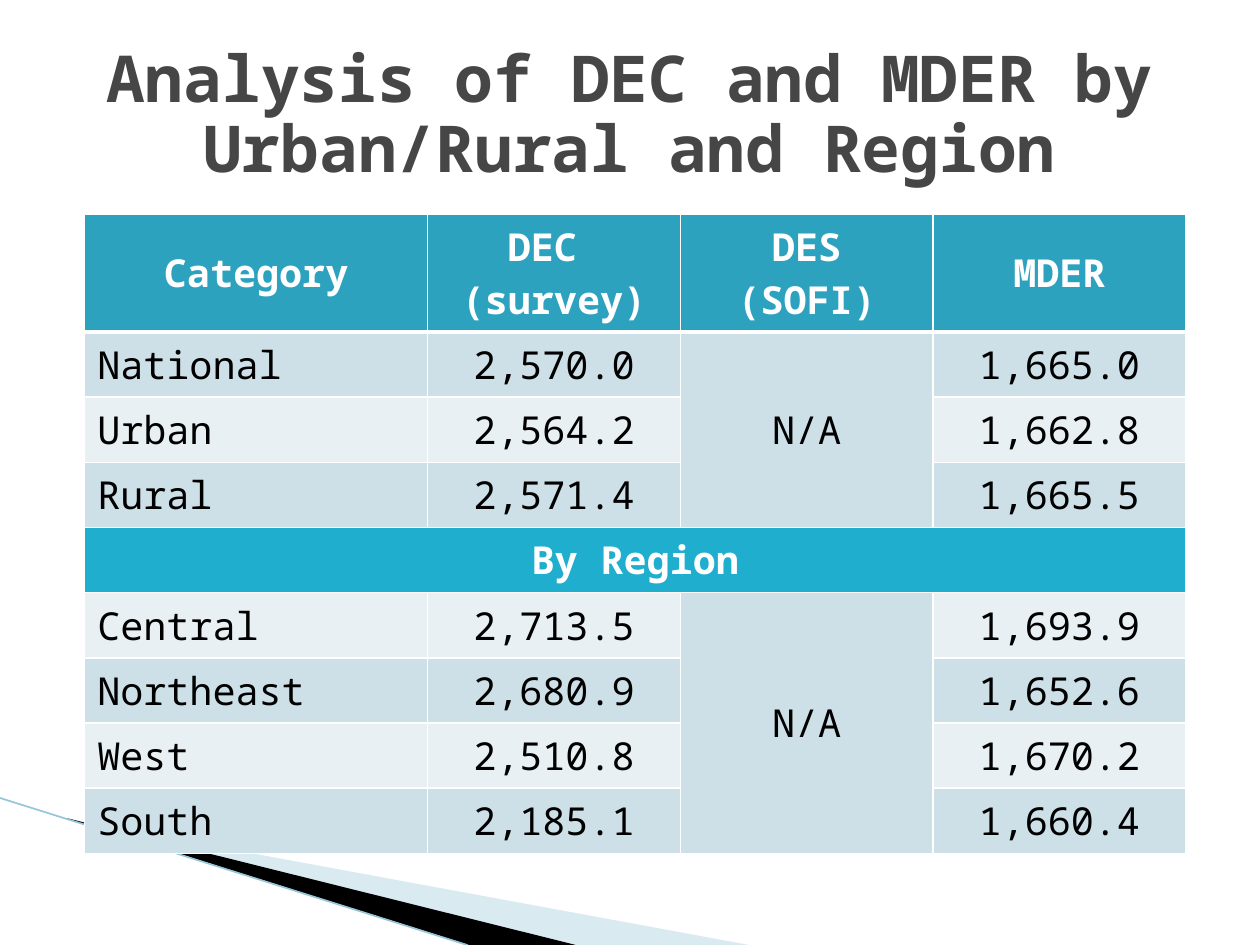
from dataclasses import dataclass
from lxml import etree
from pptx import Presentation
from pptx.dml.color import RGBColor
from pptx.enum import shapes, text
from pptx.oxml import ns
from pptx.util import Pt


@dataclass(frozen=True)
class Theme:
    face: str = "Noto Sans Mono"
    head: float = 36.9
    body: float = 22
    ink: str = "000000"
    grey: str = "464646"
    white: str = "FFFFFF"
    teal: str = "2DA2BF"
    cyan: str = "1FAECD"
    odd: str = "CDE0E8"
    even: str = "E8F0F4"
    wash: str = "A0CBDC"
    edge: str = "97C5D8"


T = Theme()
MID = text.PP_ALIGN.CENTER
HEAD = ["Category", "DEC \n(survey)", "DES\n(SOFI)", "MDER"]
AREAS = [
    ["National", "2,570.0", "N/A", "1,665.0"],
    ["Urban", "2,564.2", "", "1,662.8"],
    ["Rural", "2,571.4", "", "1,665.5"],
]
REGIONS = [
    ["Central", "2,713.5", "N/A", "1,693.9"],
    ["Northeast", "2,680.9", "", "1,652.6"],
    ["West", "2,510.8", "", "1,670.2"],
    ["South", "2,185.1", "", "1,660.4"],
]


def rgb(tone):
    return RGBColor.from_string(tone)


def paint(fill, tone):
    fill.solid()
    fill.fore_color.rgb = rgb(tone)


def write(frame, words, size, tone, bold=False, align=MID):
    for i, line in enumerate(words.split("\n")):
        para = frame.add_paragraph() if i else frame.paragraphs[0]
        para.alignment = align
        run = para.add_run()
        run.text = line
        font = run.font
        font.name, font.size, font.bold = T.face, Pt(size), bold
        font.color.rgb = rgb(tone)


def rule(cell, **widths):
    props = cell._tc.get_or_add_tcPr()
    for i, side in enumerate("LRTB"):
        line = etree.Element(ns.qn("a:ln" + side), w=str(Pt(widths.get(side, 1))))
        fill = etree.SubElement(line, ns.qn("a:solidFill"))
        etree.SubElement(fill, ns.qn("a:srgbClr"), val=T.white)
        props.insert(i, line)


def add_title(slide, x, y, w, h):
    title = slide.shapes.title
    title.left, title.top, title.width, title.height = map(Pt, (x, y, w, h))
    frame = title.text_frame
    frame.word_wrap = True
    frame.auto_size = text.MSO_AUTO_SIZE.NONE
    frame.vertical_anchor = text.MSO_ANCHOR.MIDDLE
    write(frame, "Analysis of DEC and MDER by Urban/Rural and Region", T.head, T.grey, True)
    frame.paragraphs[0].line_spacing = 0.9


def add_shard(slide, x, y, points, tone, alpha=None):
    spots = [(Pt(x + a), Pt(y + b)) for a, b in points]
    form = slide.shapes.build_freeform(*spots[0], scale=1.0)
    form.add_line_segments(spots[1:], close=True)
    shard = form.convert_to_shape()
    shard.shadow.inherit = False
    shard.line.fill.background()
    paint(shard.fill, tone)
    if alpha:
        color = shard._element.spPr.find(".//" + ns.qn("a:srgbClr"))
        etree.SubElement(color, ns.qn("a:alpha"), val=str(alpha * 1000))


def add_decor(slide, x, y, w, h):
    add_shard(slide, x, y, [(40, 12.5), (w, h), (328, h), (40, 12)], T.wash, 40)
    add_shard(slide, x, y, [(38, 11.5), (329, h), (268, h), (39, 12)], T.ink)
    line = slide.shapes.add_connector(
        shapes.MSO_CONNECTOR.STRAIGHT, Pt(x), Pt(y), Pt(x + 267), Pt(y + h))
    line.line.color.rgb = rgb(T.edge)
    line.line.width = Pt(0.95)
    etree.SubElement(line._element.spPr, ns.qn("a:effectLst"))


def add_grid(slide, x, y, w, h):
    rows = [HEAD, *AREAS, ["By Region", "", "", ""], *REGIONS]
    band = len(AREAS) + 1
    last = len(rows) - 1
    top, first = 61.2, 196
    grid = slide.shapes.add_table(len(rows), len(HEAD), *map(Pt, (x, y, w, h))).table
    for c, col in enumerate(grid.columns):
        col.width = Pt((w - first) / (len(HEAD) - 1) if c else first)
    for r, row in enumerate(grid.rows):
        row.height = Pt((h - top) / last if r else top)
    for r, row in enumerate(rows):
        bold = r in (0, band)
        stripe = T.odd if r % 2 == (r < band) else T.even
        tone = {0: T.teal, band: T.cyan}.get(r, stripe)
        for c, words in enumerate(row):
            cell = grid.cell(r, c)
            paint(cell.fill, T.odd if c == 2 and not bold else tone)
            rule(cell, T=3 if r == 1 else 1, B=1 if r else 3)
            if r == 0 or words == "N/A":
                cell.vertical_anchor = text.MSO_ANCHOR.MIDDLE
            if words:
                align = MID if c or bold else text.PP_ALIGN.LEFT
                write(cell.text_frame, words, T.body, T.white if bold else T.ink, bold, align)
    for start, end in [((1, 2), (band - 1, 2)), ((band, 0), (band, 3)),
                       ((band + 1, 2), (last, 2))]:
        grid.cell(*start).merge(grid.cell(*end))


def main():
    deck = Presentation()
    deck.slide_width, deck.slide_height = Pt(720), Pt(540)
    slide = deck.slides.add_slide(deck.slide_layouts[5])
    add_decor(slide, 0, 456, 428, 84)
    add_grid(slide, 48.4, 122.4, 629.2, 345.6)
    add_title(slide, 36, 21.6, 648, 90)
    deck.save("out.pptx")


if __name__ == "__main__":
    main()
